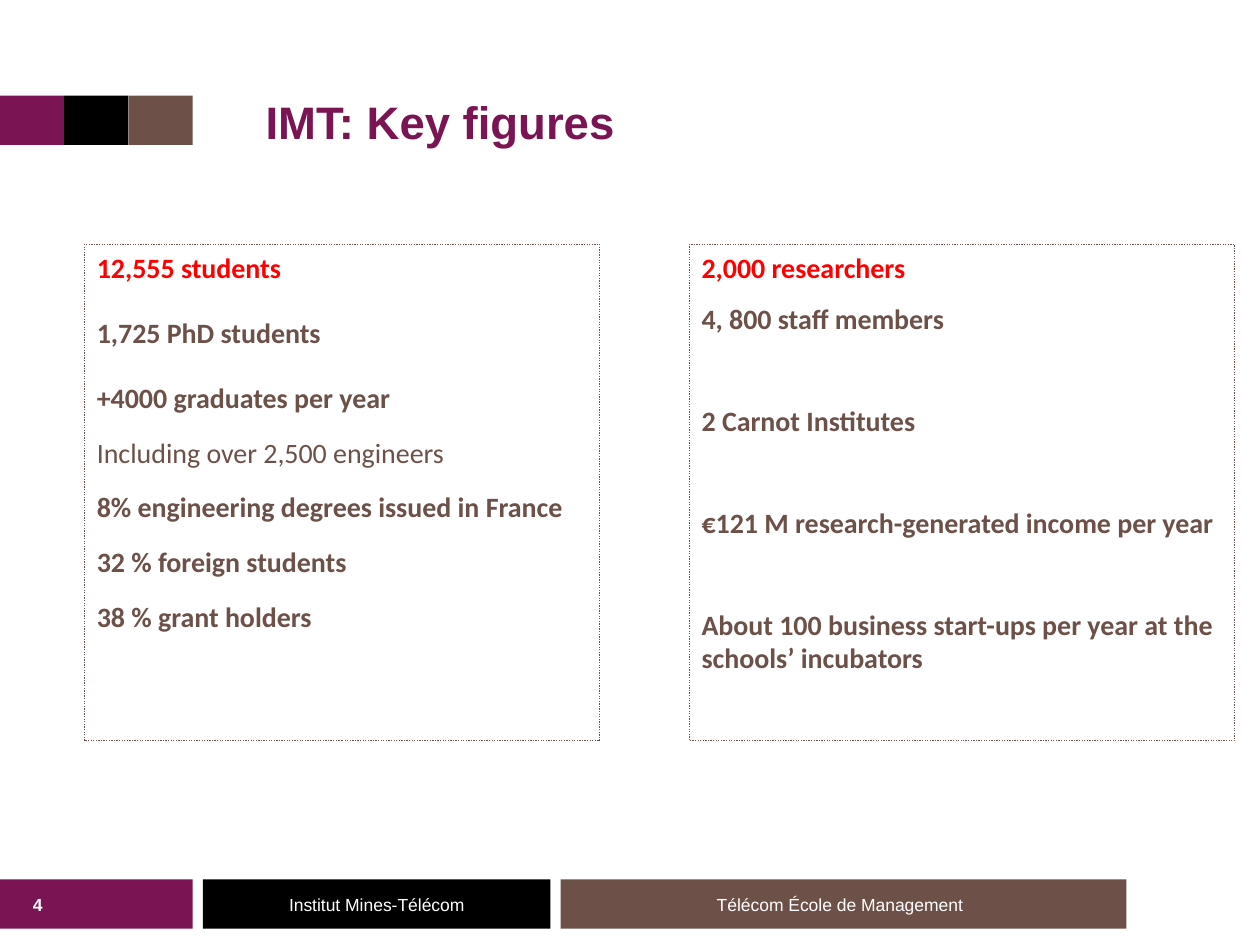
from pptx import Presentation
from pptx import util as u
from pptx.dml.color import RGBColor
from pptx.enum import dml, shapes, text

COLOURS = {
    "purple": "7A1452",
    "black": "000000",
    "brown": "6D5047",
    "red": "FF0000",
    "white": "FFFFFF",
}

FOOTER_TOP, BAR_HEIGHT = 6.98, 0.39
FOOTER_BARS = [(0, 1.53, "purple"), (4.45, 4.49, "brown"), (1.61, 2.76, "black")]
SQUARE_TOP, SQUARE_WIDTH = 0.76, 0.51
PANEL_TOP, PANEL_HEIGHT = 1.94, 3.94

RESEARCH = [
    ("2,000 researchers", "red", True, 10),
    ("4, 800 staff members", "brown", True, 39),
    ("2 Carnot Institutes", "brown", True, 39),
    ("€121 M research-generated income per year", "brown", True, 39),
    ("About 100 business start-ups per year at the schools’ incubators", "brown", True, 10),
]
STUDENTS = [
    ("12,555 students", "red", True, 18),
    ("1,725 PhD students", "brown", True, 18),
    ("+4000 graduates per year", "brown", True, 12),
    ("Including over 2,500 engineers", "brown", False, 12),
    ("8% engineering degrees issued in France", "brown", True, 12),
    ("32 % foreign students", "brown", True, 12),
    ("38 % grant holders", "brown", True, 18),
]


def colour(name):
    return RGBColor.from_string(COLOURS[name])


def box(left, top, width, height):
    return [u.Inches(value) for value in (left, top, width, height)]


def format_paragraph(paragraph, font_name, size, colour_name, bold, align):
    paragraph.alignment = align
    for run in paragraph.runs:
        run.font.name = font_name
        run.font.size = u.Pt(size)
        run.font.bold = bold
        run.font.color.rgb = colour(colour_name)


def add_rectangle(slide, place, fill):
    shape = slide.shapes.add_shape(shapes.MSO_SHAPE.RECTANGLE, *box(*place))
    shape.shadow.inherit = False
    shape.fill.solid()
    shape.fill.fore_color.rgb = colour(fill)
    shape.line.fill.background()
    return shape


def set_label(shape, label, size, colour_name, bold=False,
              align=text.PP_ALIGN.CENTER, anchor=text.MSO_ANCHOR.MIDDLE):
    frame = shape.text_frame
    frame.word_wrap = True
    frame.vertical_anchor = anchor
    frame.text = label
    format_paragraph(frame.paragraphs[0], "Arial", size, colour_name, bold, align)


def add_label(slide, place, label, size, colour_name, **options):
    shape = slide.shapes.add_textbox(*box(*place))
    set_label(shape, label, size, colour_name, **options)
    return shape


def add_panel(slide, left, width, entries):
    shape = add_rectangle(slide, (left, PANEL_TOP, width, PANEL_HEIGHT), "white")
    shape.line.color.rgb = colour("brown")
    shape.line.width = u.Pt(0.75)
    shape.line.dash_style = dml.MSO_LINE.ROUND_DOT
    frame = shape.text_frame
    frame.word_wrap = True
    frame.vertical_anchor = text.MSO_ANCHOR.TOP
    frame.text = "\n".join(entry[0] for entry in entries)
    for paragraph, (_, colour_name, bold, space) in zip(frame.paragraphs, entries):
        paragraph.space_after = u.Pt(space)
        format_paragraph(paragraph, "Calibri", 16, colour_name, bold, text.PP_ALIGN.LEFT)


def main():
    presentation = Presentation()
    presentation.slide_width = u.Inches(10)
    presentation.slide_height = u.Inches(7.5)
    slide = presentation.slides.add_slide(presentation.slide_layouts[6])

    bars = {
        fill: add_rectangle(slide, (left, FOOTER_TOP, width, BAR_HEIGHT), fill)
        for left, width, fill in FOOTER_BARS
    }
    for index, fill in enumerate(("purple", "black", "brown")):
        add_rectangle(
            slide, (index * SQUARE_WIDTH, SQUARE_TOP, SQUARE_WIDTH, BAR_HEIGHT), fill)
    set_label(bars["black"], "Institut Mines-Télécom", 10, "white")

    add_label(slide, (2.01, 0, 5.91, 1.23), "IMT: Key figures", 26, "purple", bold=True,
              align=text.PP_ALIGN.LEFT, anchor=text.MSO_ANCHOR.BOTTOM)
    add_label(slide, (0.01, FOOTER_TOP, 0.58, BAR_HEIGHT), "4", 10, "white", bold=True)
    add_panel(slide, 5.47, 4.33, RESEARCH)
    add_panel(slide, 0.67, 4.09, STUDENTS)
    school = add_label(slide, (4.45, FOOTER_TOP, 4.49, BAR_HEIGHT),
                       "Télécom École de Management", 10, "white")
    school.text_frame.margin_right = u.Inches(0.16)

    presentation.save("out.pptx")


if __name__ == "__main__":
    main()
